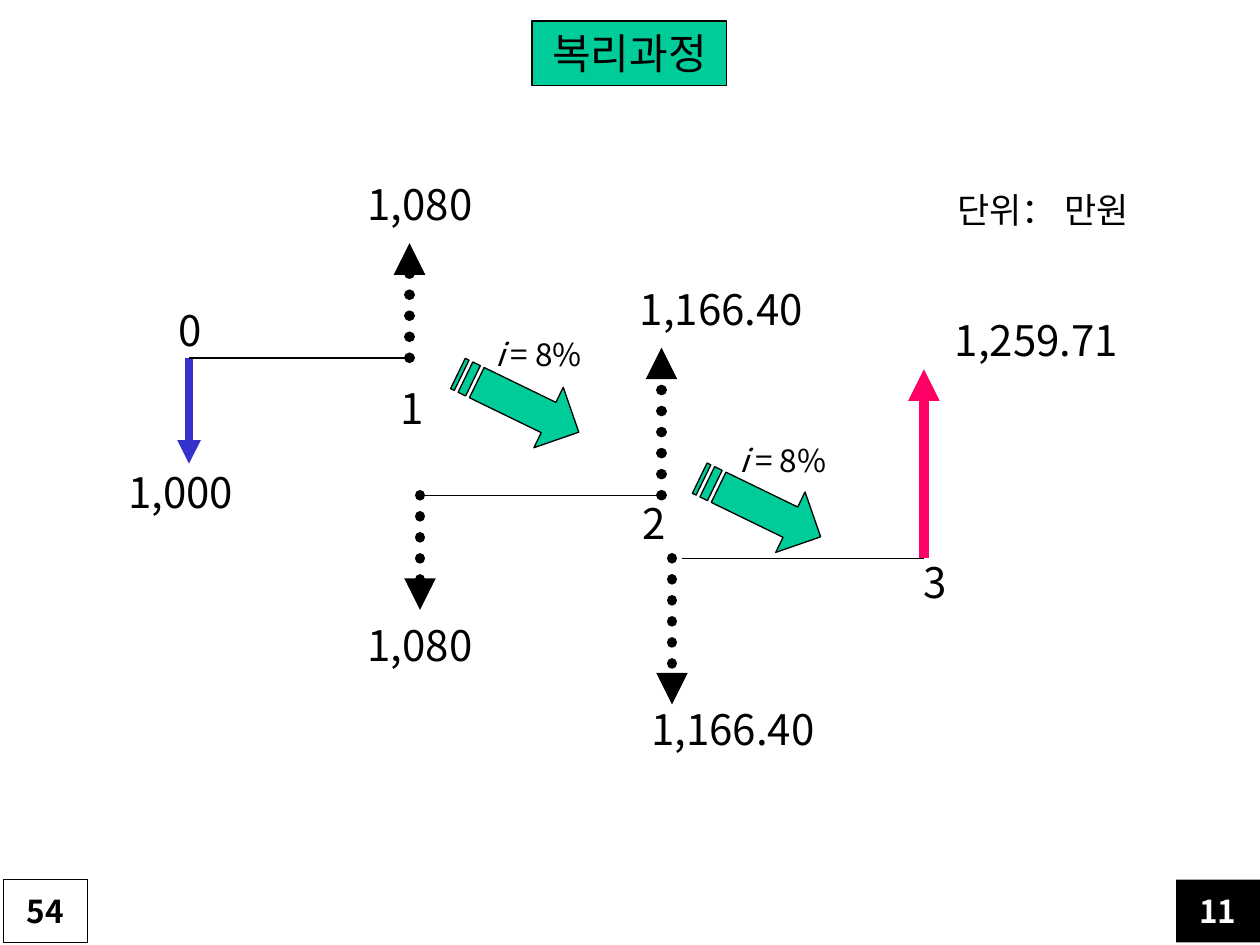
from dataclasses import dataclass
from typing import Optional

from lxml.etree import SubElement
from pptx import Presentation
from pptx.dml.color import RGBColor
from pptx.enum.dml import MSO_LINE
from pptx.enum.shapes import MSO_CONNECTOR, MSO_SHAPE
from pptx.enum.text import MSO_ANCHOR, MSO_AUTO_SIZE, PP_ALIGN
from pptx.oxml.ns import qn
from pptx.util import Pt

COLORS = {
    "black": "000000",
    "white": "FFFFFF",
    "green": "00CC99",
    "blue": "3333CC",
    "pink": "FF0066",
}
FONT = "Noto Sans CJK KR"
THIN = 0.75
ARROW_UNIT = 2.4  # grid step of the striped arrows
STRIPED_ARROW = [
    [(24, 0), (24, 4), (5, 4), (5, 12), (24, 12), (24, 16), (32, 8)],
    [(2, 4), (2, 12), (4, 12), (4, 4)],
    [(0, 4), (0, 12), (1, 12), (1, 4)],
]


@dataclass
class Line:
    x1: float
    y1: float
    x2: float
    y2: float
    color: str = "black"
    width: float = THIN
    arrow: bool = False
    dotted: bool = False


@dataclass
class Label:
    text: str
    left: float
    top: float
    width: float
    height: float = 36
    size: float = 24
    italic_lead: str = ""
    wrap: bool = False


@dataclass
class Panel:
    text: str
    left: float
    top: float
    width: float
    height: float
    fill: str
    text_color: str
    border: Optional[str]
    size: float = 18
    bold: bool = True


def flow(x: float, start: float, end: float, color: str = "black",
         width: float = 6, dotted: bool = True) -> Line:
    """A vertical cash flow arrow."""
    return Line(x, start, x, end, color, width, True, dotted)


def rgb(name: str) -> RGBColor:
    return RGBColor.from_string(COLORS[name])


def draw_line(page, line: Line) -> None:
    connector = page.shapes.add_connector(
        MSO_CONNECTOR.STRAIGHT, Pt(line.x1), Pt(line.y1), Pt(line.x2), Pt(line.y2))
    connector.line.color.rgb = rgb(line.color)
    connector.line.width = Pt(line.width)
    outline = connector.line._get_or_add_ln()
    if line.dotted:
        connector.line.dash_style = MSO_LINE.ROUND_DOT
        outline.set("cap", "rnd")
    if line.arrow:
        SubElement(outline, qn("a:tailEnd"), type="triangle")
    SubElement(connector.element.spPr, qn("a:effectLst"))


def style_paragraph(para, size: float, color: str, bold: bool = False) -> None:
    font = para.font
    font.name = FONT
    font.size = Pt(size)
    font.bold = bold
    font.color.rgb = rgb(color)
    SubElement(font._element, qn("a:ea"), typeface=FONT)


def draw_label(page, label: Label) -> None:
    box = page.shapes.add_textbox(
        Pt(label.left), Pt(label.top), Pt(label.width), Pt(label.height))
    frame = box.text_frame
    frame.word_wrap = label.wrap
    frame.auto_size = MSO_AUTO_SIZE.SHAPE_TO_FIT_TEXT
    para = frame.paragraphs[0]
    if label.italic_lead:
        span = para.add_run()
        span.text = label.italic_lead
        span.font.italic = True
    para.add_run().text = label.text
    style_paragraph(para, label.size, "black")


def draw_panel(page, panel: Panel) -> None:
    box = page.shapes.add_shape(
        MSO_SHAPE.RECTANGLE, Pt(panel.left), Pt(panel.top),
        Pt(panel.width), Pt(panel.height))
    paint(box, panel.fill, panel.border)
    frame = box.text_frame
    frame.word_wrap = False
    frame.vertical_anchor = MSO_ANCHOR.MIDDLE
    para = frame.paragraphs[0]
    para.alignment = PP_ALIGN.CENTER
    para.add_run().text = panel.text
    style_paragraph(para, panel.size, panel.text_color, panel.bold)


def paint(shape, fill: str, border: Optional[str]) -> None:
    shape.shadow.inherit = False
    shape.fill.solid()
    shape.fill.fore_color.rgb = rgb(fill)
    if border:
        shape.line.color.rgb = rgb(border)
        shape.line.width = Pt(THIN)
    else:
        shape.line.fill.background()


def draw_striped_arrow(page, left: float, top: float) -> None:
    first, *stripes = STRIPED_ARROW
    builder = page.shapes.build_freeform(*first[0], scale=Pt(ARROW_UNIT))
    builder.add_line_segments(first[1:], close=True)
    for stripe in stripes:
        builder.move_to(*stripe[0])
        builder.add_line_segments(stripe[1:], close=True)
    arrow = builder.convert_to_shape(Pt(left), Pt(top))
    arrow.rotation = 25.9
    paint(arrow, "green", "black")


LINES = [
    # First period
    flow(108, 204.5, 265, "blue", 4.5, dotted=False),
    Line(108, 204.5, 234, 204.5),
    flow(234, 204.5, 139),
    # Second period
    flow(240, 283, 348.5),
    Line(240, 283, 378, 283),
    flow(378, 283, 198.7),
    # Third period
    flow(384, 319, 402.5),
    Line(390, 319, 528, 319),
    flow(528, 319, 211, "pink", dotted=False),
]

LABELS = [
    # Amounts
    Label("1,000", 66.2, 263, 75.6),
    Label("1,080", 203, 98.6, 75.6),
    Label("1,080", 203, 350.6, 75.6),
    Label("1,166.40", 358.6, 158.4, 108.7),
    Label("1,166.40", 365, 398.2, 108.7),
    Label("1,259.71", 538.6, 176.4, 108.7),
    # Points in time
    Label("0", 95, 170.6, 28.8),
    Label("1", 221.8, 215.3, 28.8),
    Label("2", 360, 280.8, 28.8),
    Label("3", 520.6, 314.6, 28.8),
    # Unit and interest rates
    Label("단위： 만원", 540, 104.4, 138.2, 31, size=20, wrap=True),
    Label(" = 8%", 275.8, 188, 66.2, 28.8, 18, italic_lead="i"),
    Label(" = 8%", 415.4, 248.4, 66.2, 28.8, 18, italic_lead="i"),
]

PANELS = [
    # Title and page numbers
    Panel("복리과정", 304, 12, 111.4, 36.7, "green", "black", "black", 24, False),
    Panel("11", 672, 502.6, 48, 36, "black", "white", None),
    Panel("54", 2, 502.6, 48, 36, "white", "black", "black"),
]


def main() -> None:
    deck = Presentation()
    deck.slide_width, deck.slide_height = Pt(720), Pt(540)
    page = deck.slides.add_slide(deck.slide_layouts[6])
    for line in LINES:
        draw_line(page, line)
    for left, top in [(257.8, 211), (396, 270.8)]:
        draw_striped_arrow(page, left, top)
    for label in LABELS:
        draw_label(page, label)
    for panel in PANELS:
        draw_panel(page, panel)
    deck.save("out.pptx")


if __name__ == "__main__":
    main()
